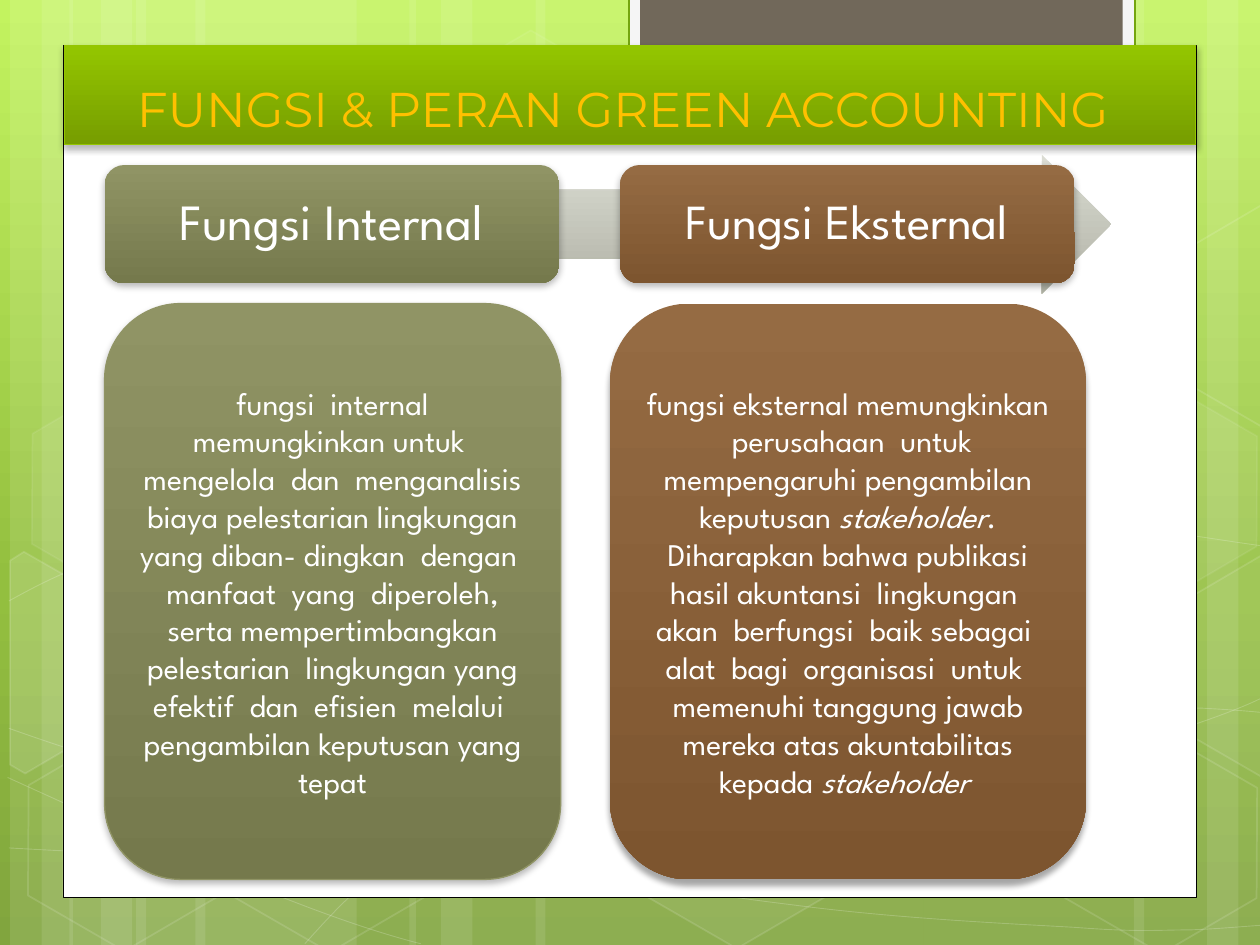
import lxml.etree
import pptx
import pptx.dml.color
import pptx.enum.shapes
import pptx.enum.text
import pptx.oxml.ns
import pptx.util

Inches = pptx.util.Inches
Pt = pptx.util.Pt
qn = pptx.oxml.ns.qn
rgb = pptx.dml.color.RGBColor.from_string
kinds = pptx.enum.shapes.MSO_SHAPE
anchors = pptx.enum.text.MSO_ANCHOR
center = pptx.enum.text.PP_ALIGN.CENTER


def paint(shape, fill=None, line=None, width=1, clear=100, faint=100, shadow=None):
    """Fill is a hex string, a (top, bottom) pair or None; clear and faint are opacities."""
    shape.shadow.inherit = False
    if fill is None:
        shape.fill.background()
    elif isinstance(fill, str):
        shape.fill.solid()
        shape.fill.fore_color.rgb = rgb(fill)
    else:
        shape.fill.gradient()
        shape.fill.gradient_angle = 270
        for stop, tone in zip(shape.fill.gradient_stops, fill):
            stop.color.rgb = rgb(tone)
    if line:
        shape.line.color.rgb = rgb(line)
        shape.line.width = Pt(width)
    else:
        shape.line.fill.background()
    props = shape.element.spPr
    solid = qn("a:solidFill") + "/" + qn("a:srgbClr")
    for place, part in ((solid, clear), (qn("a:ln") + "/" + solid, faint)):
        tone = props.find(place)
        if tone is not None and part < 100:
            lxml.etree.SubElement(tone, qn("a:alpha"), val=str(part * 1000))
    if shadow:
        part, blur, dist = shadow
        outer = lxml.etree.SubElement(
            props.find(qn("a:effectLst")), qn("a:outerShdw"), blurRad=str(Pt(blur)),
            dist=str(Pt(dist)), dir="5400000", algn="ctr", rotWithShape="0")
        tone = lxml.etree.SubElement(outer, qn("a:srgbClr"), val="000000")
        lxml.etree.SubElement(tone, qn("a:alpha"), val=str(part * 1000))


def write(shape, parts, font, color, anchor=anchors.MIDDLE):
    """Parts are (text, size, italic) runs of one centred paragraph."""
    frame = shape.text_frame
    frame.word_wrap = True
    frame.vertical_anchor = anchor
    para = frame.paragraphs[0]
    para.alignment = center
    for text, size, slant in parts:
        run = para.add_run()
        run.text = text
        run.font.name = font
        run.font.size = Pt(size)
        run.font.italic = slant
        run.font.color.rgb = rgb(color)


deck = pptx.Presentation()
deck.slide_width, deck.slide_height = Inches(10), Inches(7.5)
slide = deck.slides.add_slide(deck.slide_layouts[6])
shapes = slide.shapes

# Background gradient with a middle stop
back = slide.background.fill
back.gradient()
back.gradient_angle = 270
for stop, tone in zip(back.gradient_stops, ("C3F35F", "81A53E")):
    stop.color.rgb = rgb(tone)
stops = slide.element.find(".//" + qn("a:gsLst"))
mid = lxml.etree.Element(qn("a:gs"), pos="62000")
lxml.etree.SubElement(mid, qn("a:srgbClr"), val="93BF3F")
stops.insert(1, mid)

# Pale vertical bands
for left, width in ((1.08, 1.75), (0.08, 0.5), (0.33, 0.83), (1.55, 1.75),
                    (0.55, 0.5), (0.8, 0.83), (7.33, 1.75), (9.58, 0.5),
                    (9, 0.83), (4.25, 3.08), (3.25, 0.5), (3.5, 0.83)):
    band = shapes.add_shape(kinds.RECTANGLE, Inches(left), 0, Inches(width), Inches(7.5))
    paint(band, "FFFFFF", clear=10)

# Thin waves: a start point, then three points for each cubic curve
waves = (
    [(0.07, 6.73), (0.61, 6.76), (1.15, 6.79), (1.9, 6.78), (2.65, 6.77), (3.58, 6.75),
     (4.58, 6.65), (5.58, 6.55), (7, 6.36), (7.92, 6.17), (8.83, 5.98), (9.77, 5.68),
     (10.07, 5.51)],
    [(0.07, 4.77), (0.36, 4.61), (0.65, 4.46), (1.21, 4.31), (1.78, 4.16), (2.59, 3.94),
     (3.47, 3.87), (4.36, 3.8), (5.44, 3.79), (6.54, 3.87), (7.64, 3.95), (9.47, 4.26),
     (10.07, 4.34)],
    [(0.06, 6.17), (1.27, 6.72), (2.47, 7.27), (3.34, 7.49)],
    [(0.07, 5.78), (0.38, 5.89), (0.7, 6), (1.28, 6.16), (1.86, 6.31), (2.73, 6.56),
     (3.57, 6.73), (4.4, 6.9), (5.45, 7.08), (6.28, 7.18), (7.11, 7.29), (8, 7.33),
     (8.53, 7.36), (9.05, 7.4), (9.19, 7.38), (9.45, 7.38), (9.71, 7.37), (9.89, 7.35),
     (10.07, 7.34)],
    [(2.42, 7.49), (2.6, 7.29), (2.78, 7.09), (3.02, 6.91), (3.26, 6.73), (3.6, 6.53),
     (3.88, 6.39), (4.16, 6.25), (4.33, 6.19), (4.7, 6.09), (5.06, 5.99), (5.73, 5.85),
     (6.08, 5.78), (6.44, 5.71), (6.49, 5.71), (6.8, 5.69), (7.11, 5.66), (7.6, 5.63),
     (7.94, 5.62), (8.29, 5.61), (8.86, 5.62), (8.86, 5.62), (8.86, 5.62), (9.53, 5.62),
     (9.53, 5.62), (9.71, 5.63), (9.88, 5.64), (10.06, 5.66)],
)
for wave in waves:
    dots = [(Inches(x), Inches(y)) for x, y in wave]
    pen = shapes.build_freeform(*dots[0])
    pen.add_line_segments(dots[1:], close=False)
    curve = pen.convert_to_shape()
    track = curve.element.find(".//" + qn("a:path"))
    legs = track.findall(qn("a:lnTo"))
    for i in range(0, len(legs), 3):
        bend = lxml.etree.SubElement(track, qn("a:cubicBezTo"))
        for leg in legs[i:i + 3]:
            bend.append(leg[0])
            track.remove(leg)
    paint(curve, None, "FFFFFF", 0.5, faint=20)

# Tilted hexagons: left, top, fill opacity, line opacity
for left, top, clear, faint in ((3.34, 0.36, 4, 8), (4.97, 5.89, 6, 12),
                                (0.11, 5.91, 0, 12), (0.14, 3.12, 7, 8),
                                (1.74, 5.92, 0, 12), (7.53, 4.53, 10, 12),
                                (8.34, 5.93, 0, 12), (8.34, 3.14, 7, 8)):
    cell = shapes.add_shape(kinds.HEXAGON, Inches(left), Inches(top), Inches(1.75), Inches(1.52))
    cell.adjustments[0] = 0.285
    cell.rotation = 30
    paint(cell, "FFFFFF" if clear else None, "FFFFFF", 1, clear, faint)

# Hexagons cut by the slide edges
edge = [(9.26, 4.85), (10.01, 4.41), (10.09, 4.46), (10.09, 6.13), (10.02, 6.17), (9.26, 5.73)]
for cut, clear in (
        ([(0.08, 4.45), (0.19, 4.38), (0.96, 4.82), (0.95, 5.7), (0.2, 6.14), (0.08, 6.07)], 10),
        (edge, 4),
        ([(x, y - 2.78) for x, y in edge], 0)):
    dots = [(Inches(x), Inches(y)) for x, y in cut]
    pen = shapes.build_freeform(*dots[0])
    pen.add_line_segments(dots[1:])
    paint(pen.convert_to_shape(), "FFFFFF" if clear else None, "FFFFFF", 1, clear, 12)

# White panel and top tab
for left, top, width, height, fill, line, weight in (
        (0.5, 0.36, 9, 6.76, "FFFFFF", "000000", 0.5),
        (4.99, -0.02, 4.02, 0.76, "F5F5F5", "74A510", 1.25),
        (5.08, -0.02, 3.83, 0.68, "71685A", None, 0)):
    box = shapes.add_shape(kinds.RECTANGLE, Inches(left), Inches(top), Inches(width), Inches(height))
    paint(box, fill, line, weight)

# Title bar
soft = (28, 4, 2)
title = shapes.add_shape(kinds.RECTANGLE, Inches(0.51), Inches(0.36), Inches(8.98), Inches(0.79))
paint(title, ("94C600", "769D00"), "94C600", 0.75, shadow=soft)
write(title, [("FUNGSI & PERAN GREEN ACCOUNTING", 27.9, False), (" ", 32.4, False)],
      "Montserrat", "FFC000", anchors.BOTTOM)

# Arrow behind the headings
arrow = shapes.add_shape(kinds.RIGHT_ARROW, Inches(1.26), Inches(1.23), Inches(7.56), Inches(1.1))
paint(arrow, ("DBDCD3", "B0B2A5"))

# Headings: a plate with a text box on it
olive, brown = ("909465", "75794C"), ("956B43", "7D552F")
for left, fill, text, size in ((0.83, olive, "Fungsi Internal", 29),
                               (4.92, brown, "Fungsi Eksternal", 28)):
    plate = shapes.add_shape(kinds.ROUNDED_RECTANGLE, Inches(left), Inches(1.31),
                             Inches(3.61), Inches(0.94))
    paint(plate, fill, shadow=soft)
    label = shapes.add_textbox(Inches(left + 0.04), Inches(1.35), Inches(3.52), Inches(0.85))
    write(label, [(text, size, False)], "League Spartan", "FFFFFF")
    label.text_frame.paragraphs[0].line_spacing = 0.9

# Text cards
inner = [("fungsi  internal memungkinkan untuk  mengelola  dan  menganalisis biaya pelestarian "
          "lingkungan yang diban- dingkan  dengan  manfaat  yang  diperoleh, serta "
          "mempertimbangkan pelestarian  lingkungan yang efektif  dan  efisien  melalui  "
          "pengambilan keputusan yang tepat", 18, False)]
outer = [("fungsi eksternal memungkinkan  perusahaan  untuk mempengaruhi pengambilan "
          "keputusan ", 18, False),
         ("stakeholder", 18, True),
         (". Diharapkan bahwa publikasi hasil akuntansi  lingkungan  akan  berfungsi  baik "
          "sebagai  alat  bagi  organisasi  untuk  memenuhi tanggung jawab mereka atas "
          "akuntabilitas kepada ", 18, False),
         ("stakeholder ", 18, True)]
for left, width, fill, line, shadow, parts in (
        (0.83, 3.62, olive, "909465", soft, inner),
        (4.84, 3.78, brown, None, (34, 3.5, 4), outer)):
    card = shapes.add_shape(kinds.ROUNDED_RECTANGLE, Inches(left), Inches(2.41),
                            Inches(width), Inches(4.57))
    paint(card, fill, line, 0.75, shadow=shadow)
    write(card, parts, "League Spartan", "FFFFFF")

deck.save("out.pptx")
